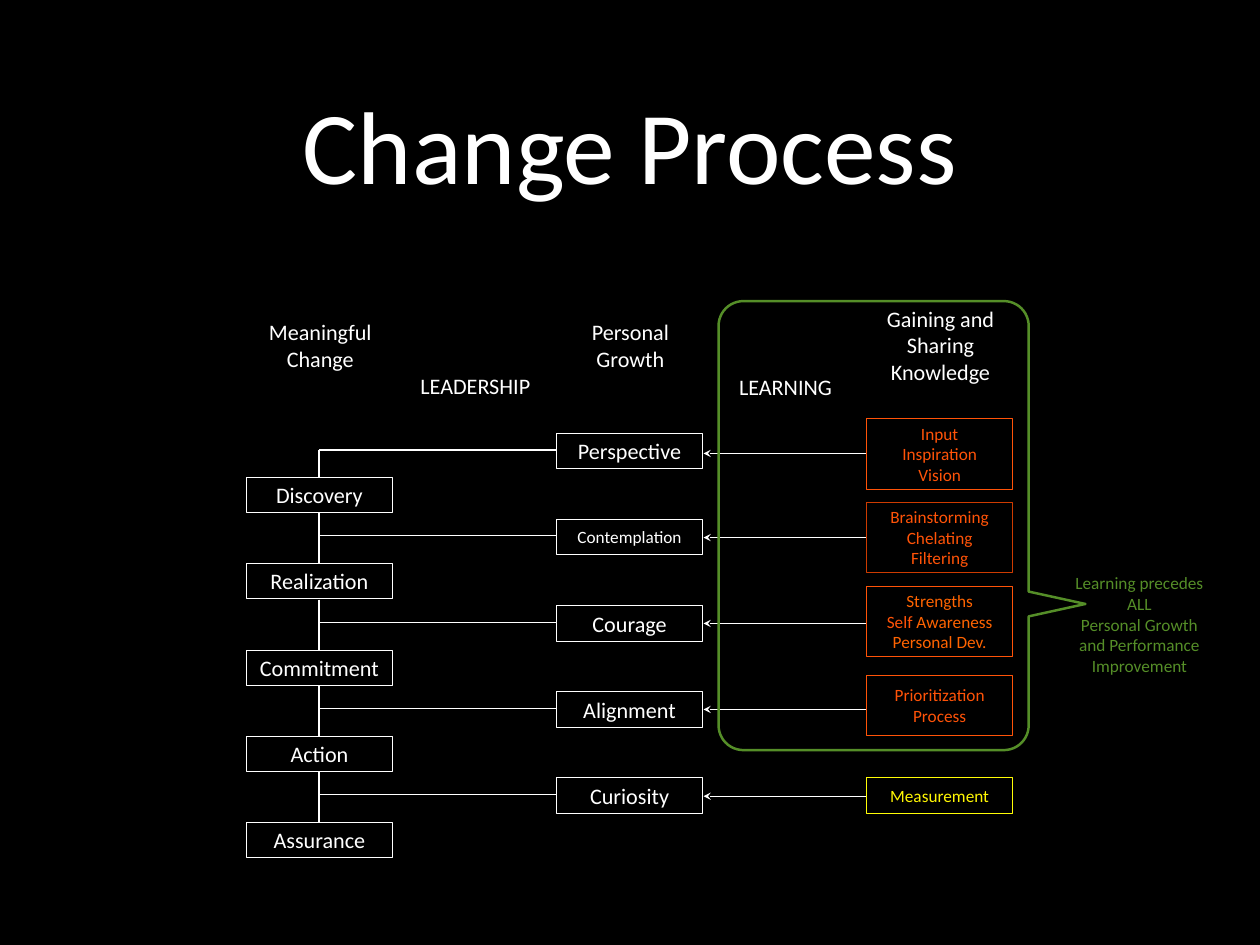
from math import cos, radians, sin

from lxml.etree import SubElement
from pptx import Presentation
from pptx.dml.color import RGBColor
from pptx.enum.shapes import MSO_CONNECTOR, MSO_SHAPE
from pptx.enum.text import MSO_ANCHOR, PP_ALIGN
from pptx.oxml.ns import qn
from pptx.util import Pt

EMU_PER_PX = 9144
WHITE, BLACK, GREEN = "FFFFFF", "000000", "558E28"
ORANGE, AMBER, RUST = "FF5308", "FF6401", "CE3B00"
YELLOW, LEMON = "FFFD06", "FFF703"
CHANGE_X, GROWTH_X, KNOWLEDGE_X = 278, 628, 978
BOX_WIDTH, BOX_HEIGHT = 165, 40
SPINE_X = 360
ROW_TOP, ROW_STEP, CHANGE_DROP = 489, 97.25, 50

STAGES = [
    ("Discovery", "Perspective", 18, 512),
    ("Realization", "Contemplation", 14, 607),
    ("Commitment", "Courage", 18, 704),
    ("Action", "Alignment", 18, 801),
    ("Assurance", "Curiosity", 18, 899),
]
KNOWLEDGE = [
    (472, 81, ORANGE, ORANGE, ["Input", "Inspiration", "Vision"]),
    (567, 79, RUST, ORANGE, ["Brainstorming", "Chelating", "Filtering"]),
    (662, 79, ORANGE, AMBER,
     ["Strengths", [("Self", ORANGE), (" Awareness", AMBER)], "Personal Dev."]),
    (762, 68, ORANGE, ORANGE, ["Prioritization Process"]),
    (878, 40, YELLOW, LEMON, ["Measurement"]),
]
HEADINGS = [
    (CHANGE_X, 355, 69, ["Meaningful", "Change"]),
    (GROWTH_X, 355, 69, ["Personal Growth"]),
    (KNOWLEDGE_X, 340, 99, ["Gaining and Sharing Knowledge"]),
    (453, 416, 40, ["LEADERSHIP"]),
    (803, 417, 40, ["LEARNING"]),
]


def px(length):
    return round(length * EMU_PER_PX)


def color(hex_value):
    return RGBColor.from_string(hex_value)


def write(frame, lines, size=18, ink=WHITE, inset=0, wrap=True):
    frame.word_wrap = wrap
    frame.vertical_anchor = MSO_ANCHOR.MIDDLE
    frame.margin_left = frame.margin_right = px(inset)
    frame.margin_top = frame.margin_bottom = px(inset)
    for index, line in enumerate(lines):
        paragraph = frame.add_paragraph() if index else frame.paragraphs[0]
        paragraph.alignment = PP_ALIGN.CENTER
        pieces = [(line, ink)] if isinstance(line, str) else line
        for words, tint in pieces:
            run = paragraph.add_run()
            run.text = words
            run.font.name = "Calibri"
            run.font.size = Pt(size)
            run.font.color.rgb = color(tint)


def add_label(slide, left, top, width, height, lines, **text_format):
    label = slide.shapes.add_textbox(px(left), px(top), px(width), px(height))
    write(label.text_frame, lines, **text_format)


def add_box(slide, left, top, height, lines, border=WHITE, **text_format):
    box = slide.shapes.add_shape(
        MSO_SHAPE.RECTANGLE, px(left), px(top), px(BOX_WIDTH), px(height))
    box.shadow.inherit = False
    box.fill.solid()
    box.fill.fore_color.rgb = color(BLACK)
    box.line.color.rgb = color(border)
    box.line.width = Pt(0.5)
    write(box.text_frame, lines, **text_format)


def add_line(slide, x1, y1, x2, y2, arrow=False):
    line = slide.shapes.add_connector(
        MSO_CONNECTOR.STRAIGHT, px(x1), px(y1), px(x2), px(y2))
    line.line.color.rgb = color(WHITE)
    line.line.width = Pt(1)
    if arrow:
        SubElement(line.line._get_or_add_ln(), qn("a:headEnd"), type="stealth")
    SubElement(line._element.spPr, qn("a:effectLst"))


def corner(center_x, center_y, radius, start):
    angles = [radians(start + 7.5 * step) for step in range(13)]
    return [(center_x + radius * cos(a), center_y + radius * sin(a)) for a in angles]


def add_learning_callout(slide):
    left, top, right, bottom, radius = 811, 340, 1161, 847, 28
    tail = [(right, 668), (1225, 682), (right, 696)]
    outline = [
        *corner(left + radius, top + radius, radius, 180),
        *corner(right - radius, top + radius, radius, 270),
        *tail,
        *corner(right - radius, bottom - radius, radius, 0),
        *corner(left + radius, bottom - radius, radius, 90),
    ]
    points = [(px(x), px(y)) for x, y in outline]
    builder = slide.shapes.build_freeform(*points[0])
    builder.add_line_segments(points[1:], close=True)
    callout = builder.convert_to_shape()
    callout.shadow.inherit = False
    callout.fill.background()
    callout.line.color.rgb = color(GREEN)
    callout.line.width = Pt(2)


def add_stage(slide, index, change, growth, growth_size, arrow_y):
    growth_top = round(ROW_TOP + index * ROW_STEP)
    change_top = growth_top + CHANGE_DROP
    branch_y = growth_top + 19
    previous_bottom = round(change_top - ROW_STEP) + BOX_HEIGHT
    spine_top = previous_bottom if index else branch_y
    add_box(slide, CHANGE_X, change_top, BOX_HEIGHT, [change])
    add_box(slide, GROWTH_X, growth_top, BOX_HEIGHT, [growth], size=growth_size)
    add_line(slide, GROWTH_X, branch_y, SPINE_X, branch_y)
    add_line(slide, SPINE_X, spine_top, SPINE_X, change_top)
    add_line(slide, GROWTH_X + BOX_WIDTH + 1, arrow_y, KNOWLEDGE_X, arrow_y, arrow=True)


def main():
    presentation = Presentation()
    presentation.slide_width, presentation.slide_height = px(1422), px(1067)
    slide = presentation.slides.add_slide(presentation.slide_layouts[6])
    slide.background.fill.solid()
    slide.background.fill.fore_color.rgb = color(BLACK)

    add_label(slide, 139, 28, 1144, 267, ["Change Process"], size=84, inset=6)
    for left, top, height, lines in HEADINGS:
        add_label(slide, left, top, 167, height, lines)
    for index, stage in enumerate(STAGES):
        add_stage(slide, index, *stage)
    for top, height, border, ink, lines in KNOWLEDGE:
        add_box(slide, KNOWLEDGE_X, top, height, lines, border=border, size=14, ink=ink)
    add_learning_callout(slide)
    add_label(slide, 1208, 644, 156, 122,
              ["Learning precedes", "ALL", "Personal Growth",
               "and Performance", "Improvement"],
              size=14, ink=GREEN, wrap=False)
    presentation.save("out.pptx")


if __name__ == "__main__":
    main()
